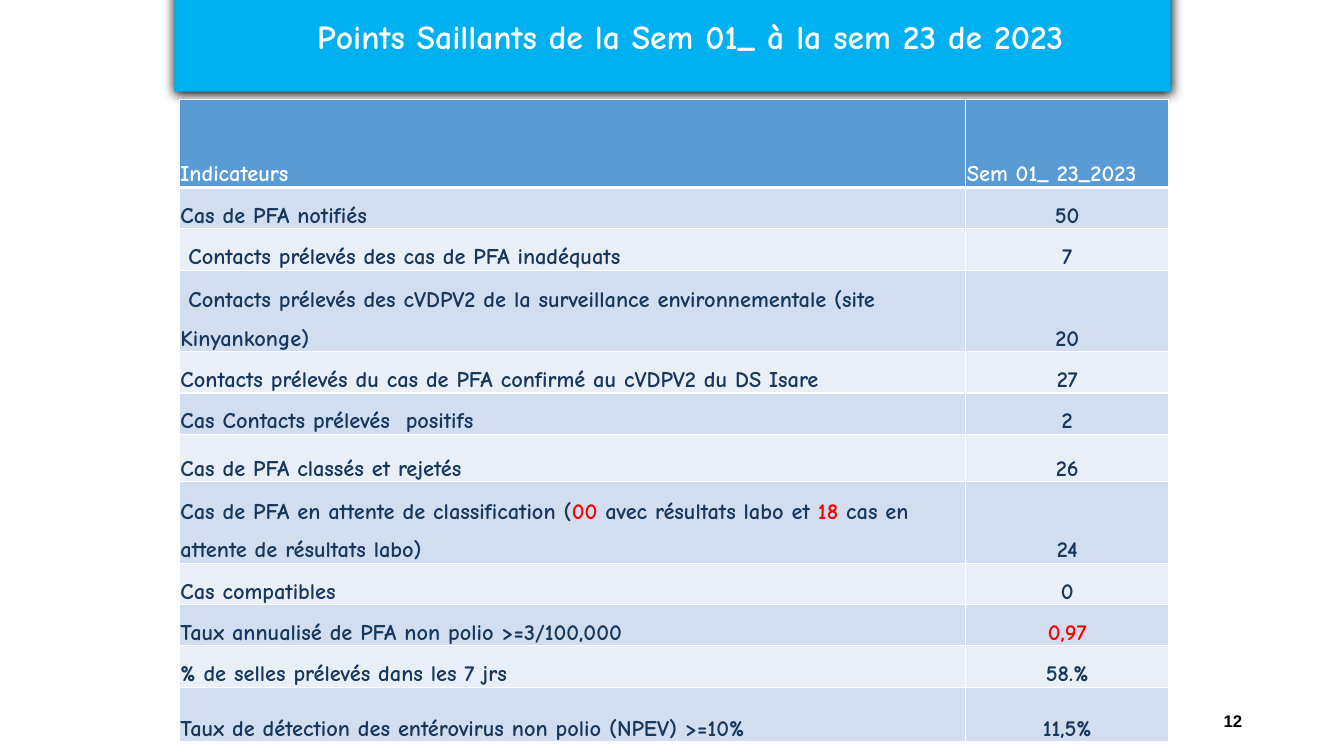
from dataclasses import dataclass

from lxml.etree import SubElement
from pptx import Presentation
from pptx.dml.color import RGBColor
from pptx.enum.shapes import MSO_SHAPE
from pptx.enum.text import MSO_ANCHOR, PP_ALIGN
from pptx.oxml import parse_xml
from pptx.oxml.ns import nsdecls, qn
from pptx.util import Inches, Pt


@dataclass(frozen=True)
class Theme:
    font: str = "Comic Neue"
    number_font: str = "Arial"
    title_size: int = 24
    table_size: int = 16
    number_size: int = 12
    white: str = "FFFFFF"
    black: str = "000000"
    banner: str = "00B0F0"
    header: str = "5B9BD5"
    bands: tuple = ("D2DEEF", "EAEFF7")
    navy: str = "17375E"
    red: str = "FF0000"


class SlideBuilder:
    """Places elements on a grid of 133.3 columns by 75 rows."""

    def __init__(self, presentation, theme):
        self.theme = theme
        self.column = presentation.slide_width / 133.3
        self.row = presentation.slide_height / 75
        self.slide = presentation.slides.add_slide(presentation.slide_layouts[6])

    def area(self, left, top, width, height):
        return (round(left * self.column), round(top * self.row),
                round(width * self.column), round(height * self.row))

    def style(self, paragraph, size, color, align, font=None):
        paragraph.alignment = align
        for run in paragraph.runs:
            run.font.name = font or self.theme.font
            run.font.size = Pt(size)
            run.font.bold = True
            run.font.color.rgb = RGBColor.from_string(color)

    def banner(self, title, *place):
        banner = self.slide.shapes.add_shape(MSO_SHAPE.RECTANGLE, *self.area(*place))
        banner.shadow.inherit = False
        banner.fill.solid()
        banner.fill.fore_color.rgb = RGBColor.from_string(self.theme.banner)
        banner.line.fill.background()
        effects = banner._element.spPr.find(qn("a:effectLst"))
        shadow = SubElement(effects, qn("a:outerShdw"), blurRad=str(Pt(8.5)),
                            dist=str(Pt(1)), dir="5400000", rotWithShape="0")
        SubElement(shadow, qn("a:srgbClr"), val=self.theme.black)
        frame = banner.text_frame
        frame.word_wrap = True
        frame.vertical_anchor = MSO_ANCHOR.TOP
        frame.margin_left, frame.margin_top = Inches(0.45), Inches(0.27)
        frame.text = title
        self.style(frame.paragraphs[0], self.theme.title_size, self.theme.white,
                   PP_ALIGN.CENTER)

    def page_number(self, number, *place):
        frame = self.slide.shapes.add_textbox(*self.area(*place)).text_frame
        frame.word_wrap = True
        frame.vertical_anchor = MSO_ANCHOR.MIDDLE
        frame.text = number
        self.style(frame.paragraphs[0], self.theme.number_size, self.theme.black,
                   PP_ALIGN.RIGHT, self.theme.number_font)

    def borders(self, cell, top, bottom):
        properties = cell._tc.get_or_add_tcPr()
        for index, (side, width) in enumerate(
                (("L", 1), ("R", 1), ("T", top), ("B", bottom))):
            properties.insert(index, parse_xml(
                f'<a:ln{side} {nsdecls("a")} w="{Pt(width)}"><a:solidFill>'
                f'<a:srgbClr val="{self.theme.white}"/></a:solidFill></a:ln{side}>'))

    def cell(self, cell, text, fill, color, align, top=1, bottom=1, red_parts=()):
        cell.fill.solid()
        cell.fill.fore_color.rgb = RGBColor.from_string(fill)
        self.borders(cell, top, bottom)
        cell.vertical_anchor = MSO_ANCHOR.BOTTOM
        cell.margin_left = cell.margin_right = cell.margin_top = Inches(0.01)
        cell.margin_bottom = 0
        paragraph = cell.text_frame.paragraphs[0]
        # Split the text around the parts that stand out in red
        pieces, rest = [], text
        for part in red_parts:
            before, _, rest = rest.partition(part)
            pieces += [before, part]
        for piece in filter(None, pieces + [rest]):
            paragraph.add_run().text = piece
        self.style(paragraph, self.theme.table_size, color, align)
        for run in paragraph.runs:
            if run.text in red_parts:
                run.font.color.rgb = RGBColor.from_string(self.theme.red)
        return paragraph

    def indicator_table(self, headings, indicators, widths, header_height, left, top):
        heights = [header_height] + [height for *_, height in indicators]
        table = self.slide.shapes.add_table(
            len(heights), len(widths),
            *self.area(left, top, sum(widths), sum(heights))).table
        for column, width in zip(table.columns, widths):
            column.width = round(width * self.column)
        for row, height in zip(table.rows, heights):
            row.height = round(height * self.row)

        # Header row
        for index, heading in enumerate(headings):
            self.cell(table.cell(0, index), heading, self.theme.header,
                      self.theme.white, PP_ALIGN.LEFT, bottom=3)

        # Banded indicator rows
        for index, (label, value, red_parts, _) in enumerate(indicators):
            for column, (text, align) in enumerate(
                    ((label, PP_ALIGN.LEFT), (value, PP_ALIGN.CENTER))):
                paragraph = self.cell(
                    table.cell(index + 1, column), text, self.theme.bands[index % 2],
                    self.theme.navy, align, top=1 if index else 3,
                    red_parts=[part for part in red_parts if part in text])
                paragraph.line_spacing = 1.5
                paragraph.space_before, paragraph.space_after = Pt(2), Pt(6)


# Label, value, parts in red, height in grid rows
SINGLE, DOUBLE = 3.9, 7.8
INDICATORS = [
    ("Cas de PFA notifiés", "50", (), SINGLE),
    (" Contacts prélevés des cas de PFA inadéquats", "7", (), SINGLE),
    (" Contacts prélevés des cVDPV2 de la surveillance environnementale "
     "(site Kinyankonge)", "20", (), DOUBLE),
    ("Contacts prélevés du cas de PFA confirmé au cVDPV2 du DS Isare", "27", (), SINGLE),
    ("Cas Contacts prélevés  positifs", "2", (), SINGLE),
    ("Cas de PFA classés et rejetés", "26", (), 4.7),
    ("Cas de PFA en attente de classification (00 avec résultats labo et 18 cas en "
     "attente de résultats labo)", "24", ("00", "18"), DOUBLE),
    ("Cas compatibles", "0", (), SINGLE),
    ("Taux annualisé de PFA non polio >=3/100,000", "0,97", ("0,97",), SINGLE),
    ("% de selles prélevés dans les 7 jrs", "58.%", (), SINGLE),
    ("Taux de détection des entérovirus non polio (NPEV) >=10%", "11,5%", (), 5.4),
]


def main():
    presentation = Presentation()
    presentation.slide_width, presentation.slide_height = Inches(13.33), Inches(7.5)
    highlights = SlideBuilder(presentation, Theme())
    highlights.page_number("12", 94.2, 69.5, 30, 4)
    highlights.banner("Points Saillants de la Sem 01_ à la sem 23 de 2023",
                      17.3, -1.1, 98.8, 10.2)
    highlights.indicator_table(("Indicateurs", "Sem 01_ 23_2023"), INDICATORS,
                               widths=(78, 20.1), header_height=8.7,
                               left=17.8, top=9.9)
    presentation.save("out.pptx")


if __name__ == "__main__":
    main()
